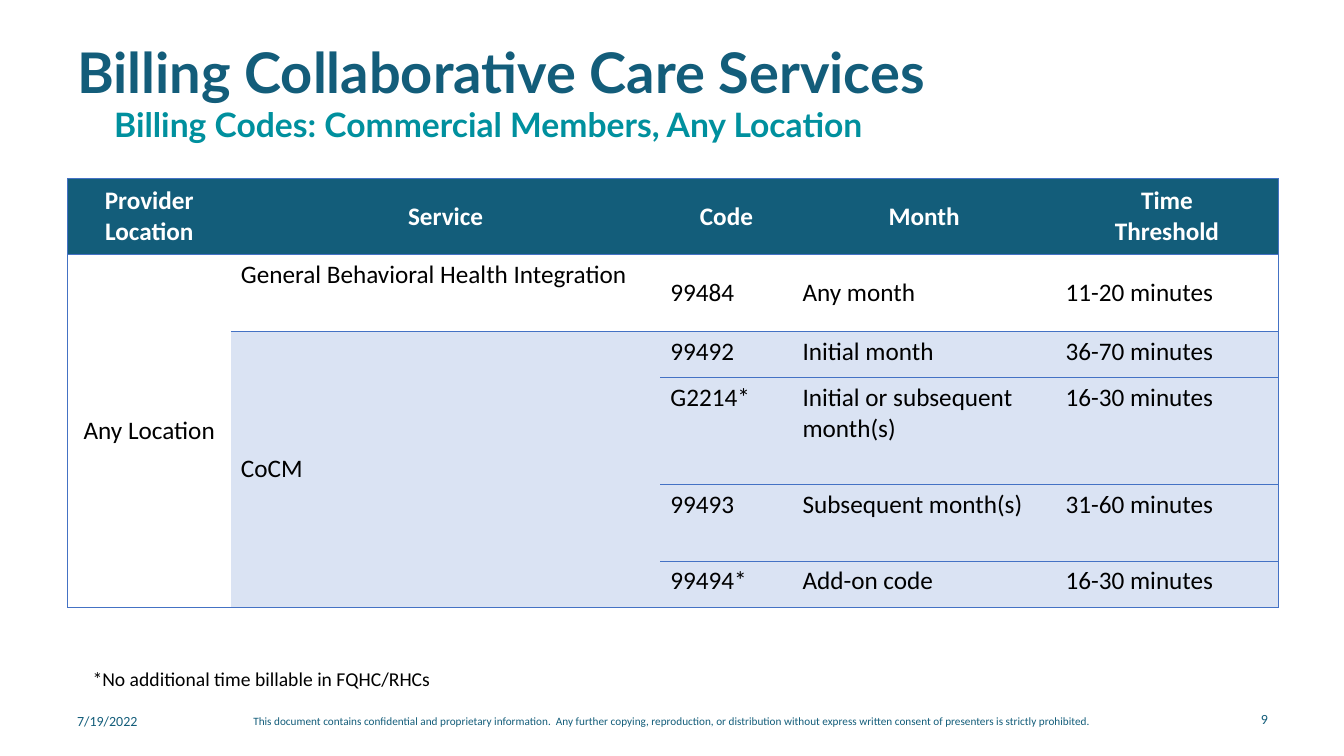
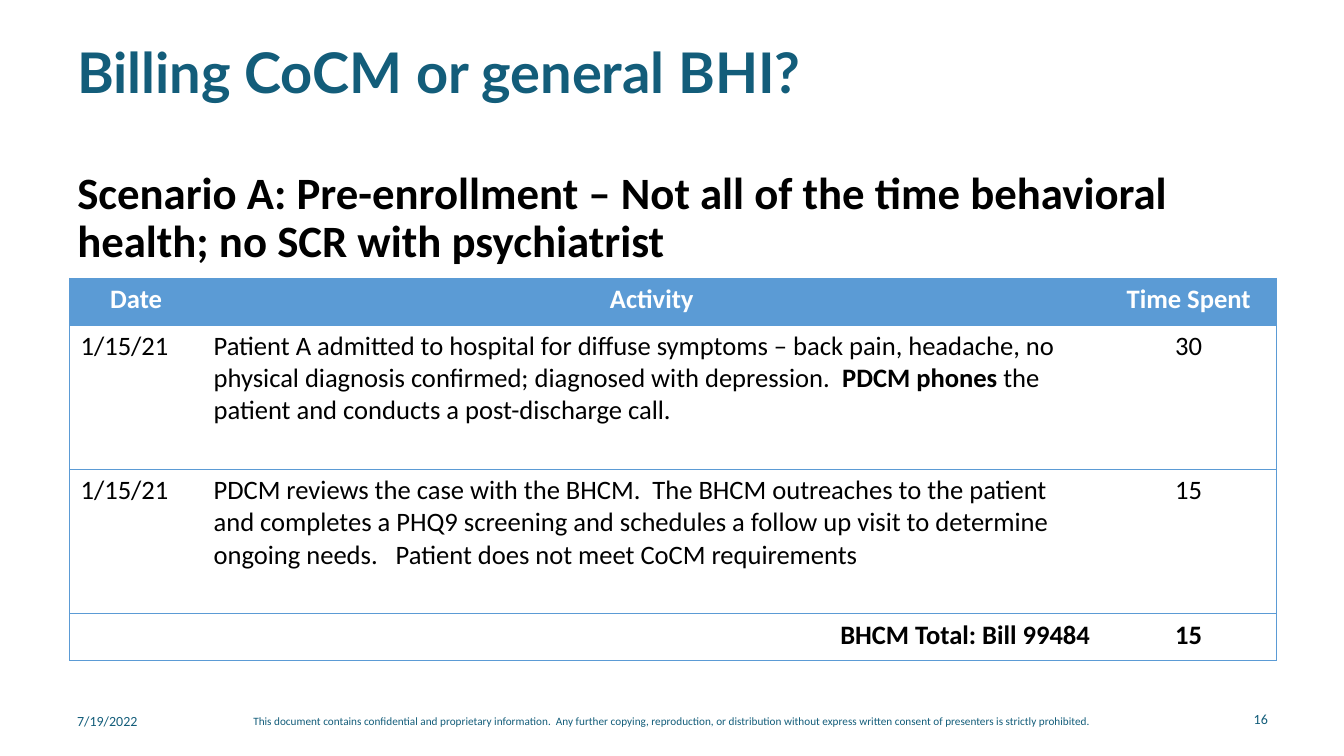
import pptx
import pptx.util
import pptx.dml.color
import pptx.enum.text
import lxml.etree
from dataclasses import dataclass, field
from pptx.oxml.ns import qn

Align = pptx.enum.text.PP_ALIGN
Anchor = pptx.enum.text.MSO_ANCHOR
Fit = pptx.enum.text.MSO_AUTO_SIZE
ALIGN = {"l": Align.LEFT, "c": Align.CENTER, "r": Align.RIGHT}
ANCHOR = {"t": Anchor.TOP, "m": Anchor.MIDDLE, "b": Anchor.BOTTOM}


# Shared colours, type and wording
def look(name, size, color, bold=False):
    return {"name": name, "size": pptx.util.Pt(size), "bold": bold, "color": color}


@dataclass
class Theme:
    width: float = 13.33
    height: float = 7.5
    navy: str = "135D7A"
    pale: str = "DAE3F3"
    sky: str = "5B9BD5"
    edge: str = "4472C4"
    date: str = "7/19/2022"
    legal: str = ("This document contains confidential and proprietary information.  "
                  "Any further copying, reproduction, or distribution without express "
                  "written consent of presenters is strictly prohibited.")
    type: dict = field(default_factory=lambda: {
        "title": look("Lato", 40, "135D7A", True),
        "sub": look("Lato", 24, "00909E", True),
        "scene": look("Calibri", 32, "000000", True),
        "note": look("Calibri", 14, "000000"),
        "foot": look("Calibri", 10, "135D7A"),
        "legal": look("Calibri", 8, "135D7A"),
    })


THEME = Theme()


# Lengths as percent of the slide
def wide(share):
    return pptx.util.Inches(THEME.width * share / 100)


def tall(share):
    return pptx.util.Inches(THEME.height * share / 100)


def area(left, top, width, height):
    return wide(left), tall(top), wide(width), tall(height)


def put(target, values):
    for key, value in values.items():
        setattr(target, key, value)


def tint(color):
    return pptx.dml.color.RGBColor.from_string(color)


# Text: each line is a paragraph, ** switches bold on and off
def write(frame, text, style, align="l", lead=None, plain=False):
    for row, line in enumerate(text.split("\n")):
        para = frame.add_paragraph() if row else frame.paragraphs[0]
        if plain:
            props = para._p.get_or_add_pPr()
            put_xml = {"marL": "0", "indent": "0"}
            for key, value in put_xml.items():
                props.set(key, value)
            lxml.etree.SubElement(props, qn("a:buNone"))
        put(para, {"alignment": ALIGN[align], "line_spacing": lead,
                   "space_before": pptx.util.Pt(0)})
        for turn, part in enumerate(line.split("**")):
            if part:
                run = para.add_run()
                run.text = part
                put(run.font, {key: style[key] for key in ("name", "size")})
                run.font.bold = style["bold"] or turn % 2 == 1
                run.font.color.rgb = tint(style["color"])


def label(slide, box, text, kind, align="l", wrap=True):
    frame = slide.shapes.add_textbox(*area(*box)).text_frame
    frame.word_wrap = wrap
    write(frame, text, THEME.type[kind], align)


def fill_in(holder, box, text, kind, anchor="t"):
    put(holder, dict(zip(("left", "top", "width", "height"), area(*box))))
    put(holder.text_frame, {"word_wrap": True, "auto_size": Fit.NONE,
                            "vertical_anchor": ANCHOR[anchor]})
    write(holder.text_frame, text, THEME.type[kind], lead=0.9, plain=True)


# Tables
def rule(cell, sides, color):
    props = cell._tc.get_or_add_tcPr()
    for side in "LRTB":
        line = lxml.etree.SubElement(props, qn("a:ln" + side))
        if side in sides:
            line.set("w", str(pptx.util.Pt(0.5)))
            solid = lxml.etree.SubElement(line, qn("a:solidFill"))
            lxml.etree.SubElement(solid, qn("a:srgbClr")).set("val", color)
        else:
            lxml.etree.SubElement(line, qn("a:noFill"))


def edges(cell, row, col, rows, cols):
    sides = "L" if col == 0 else ""
    sides += "R" if col == cols - 1 else ""
    if not cell.is_spanned:
        return sides + "TB"
    return sides + ("B" if row == rows - 1 else "")


def grid(slide, spot, cols, rows, size, edge, pad=0.75, spans=()):
    """Each row is (height, fill, aligns, anchors, texts)."""
    box = (*spot, sum(cols), sum(row[0] for row in rows))
    table = slide.shapes.add_table(len(rows), len(cols), *area(*box)).table
    put(table, {"first_row": False, "horz_banding": False})
    for column, share in zip(table.columns, cols):
        column.width = wide(share)
    for top, col, end in spans:
        table.cell(top, col).merge(table.cell(end, col))
    for r, (height, fill, aligns, anchors, texts) in enumerate(rows):
        table.rows[r].height = tall(height)
        style = look("Calibri", size, "000000" if r else "FFFFFF", r == 0)
        for c, text in enumerate(texts):
            cell = table.cell(r, c)
            rule(cell, edges(cell, r, c, len(rows), len(cols)), edge)
            if fill:
                cell.fill.solid()
                cell.fill.fore_color.rgb = tint(fill)
            else:
                cell.fill.background()
            put(cell, {"vertical_anchor": ANCHOR[anchors[c]],
                       "margin_left": wide(pad), "margin_right": wide(pad)})
            if text:
                write(cell.text_frame, text, style, aligns[c])


# Slide frame: headline and footer
def start(deck, title, number):
    slide = deck.slides.add_slide(deck.slide_layouts[1])
    fill_in(slide.shapes.title, (5, 5.33, 88.15, 8.27), title, "title")
    label(slide, (5, 93.6, 7.6, 5.33), THEME.date, "foot")
    label(slide, (87.47, 93.33, 7.6, 5.33), number, "foot", "r")
    label(slide, (12.6, 93.87, 74.87, 5.33), THEME.legal, "legal", "c")
    return slide


def codes(deck):
    slide = start(deck, "Billing Collaborative Care Services", "9")
    fill_in(slide.placeholders[1], (7.75, 7.87, 87.47, 12),
            "Billing Codes: Commercial Members, Any Location", "sub", "b")
    pale = THEME.pale
    rows = [
        (10.1, THEME.navy, "ccccc", "mmmmm",
         ("Provider Location", "Service", "Code", "Month", "Time\nThreshold")),
        (10.1, None, "cllll", "mtmmm",
         ("Any Location", "General Behavioral Health Integration", "99484",
          "Any month", "11-20 minutes")),
        (6.1, pale, "lllll", "tmttt",
         ("", "CoCM", "99492", "Initial month", "36-70 minutes")),
        (14.2, pale, "lllll", "ttttt",
         ("", "", "G2214*", "Initial or subsequent\nmonth(s)", "16-30 minutes")),
        (10.1, pale, "lllll", "ttttt",
         ("", "", "99493", "Subsequent month(s)", "31-60 minutes")),
        (6.1, pale, "lllll", "ttttt",
         ("", "", "99494*", "Add-on code", "16-30 minutes")),
    ]
    grid(slide, (5.03, 23.6), (12.15, 31.96, 9.83, 19.58, 16.58), rows, 18,
         THEME.edge, spans=((1, 0, 5), (2, 1, 5)))
    label(slide, (6.15, 87.6, 26.93, 4.53),
          "*No additional time billable in FQHC/RHCs", "note", wrap=False)


def scene(deck):
    slide = start(deck, "Billing CoCM or general BHI?", "16")
    fill_in(slide.placeholders[1], (5, 21.87, 89.8, 14.8),
            "Scenario A: Pre-enrollment – Not all of the time behavioral health; "
            "no SCR with psychiatrist", "scene")
    rows = [
        (6.2, THEME.sky, "ccc", "ttt", ("Date", "Activity", "Time Spent")),
        (19.1, None, "llc", "ttt",
         ("1/15/21",
          "Patient A admitted to hospital for diffuse symptoms – back pain, headache, "
          "no physical diagnosis confirmed; diagnosed with depression.  "
          "**PDCM phones **the patient and conducts a post-discharge call.", "30")),
        (19.1, None, "llc", "ttt",
         ("1/15/21",
          "PDCM reviews the case with the BHCM.  The BHCM outreaches to the patient "
          "and completes a PHQ9 screening and schedules a follow up visit to determine "
          "ongoing needs.   Patient does not meet CoCM requirements", "15")),
        (6.2, None, "lrc", "ttt",
         ("", "**BHCM Total: Bill 99484**", "**15**")),
    ]
    grid(slide, (5.18, 36.8), (9.9, 66.84, 13.05), rows, 19, THEME.sky, pad=0.82)


def main():
    deck = pptx.Presentation()
    put(deck, {"slide_width": wide(100), "slide_height": tall(100)})
    codes(deck)
    scene(deck)
    deck.save("out.pptx")


if __name__ == "__main__":
    main()
